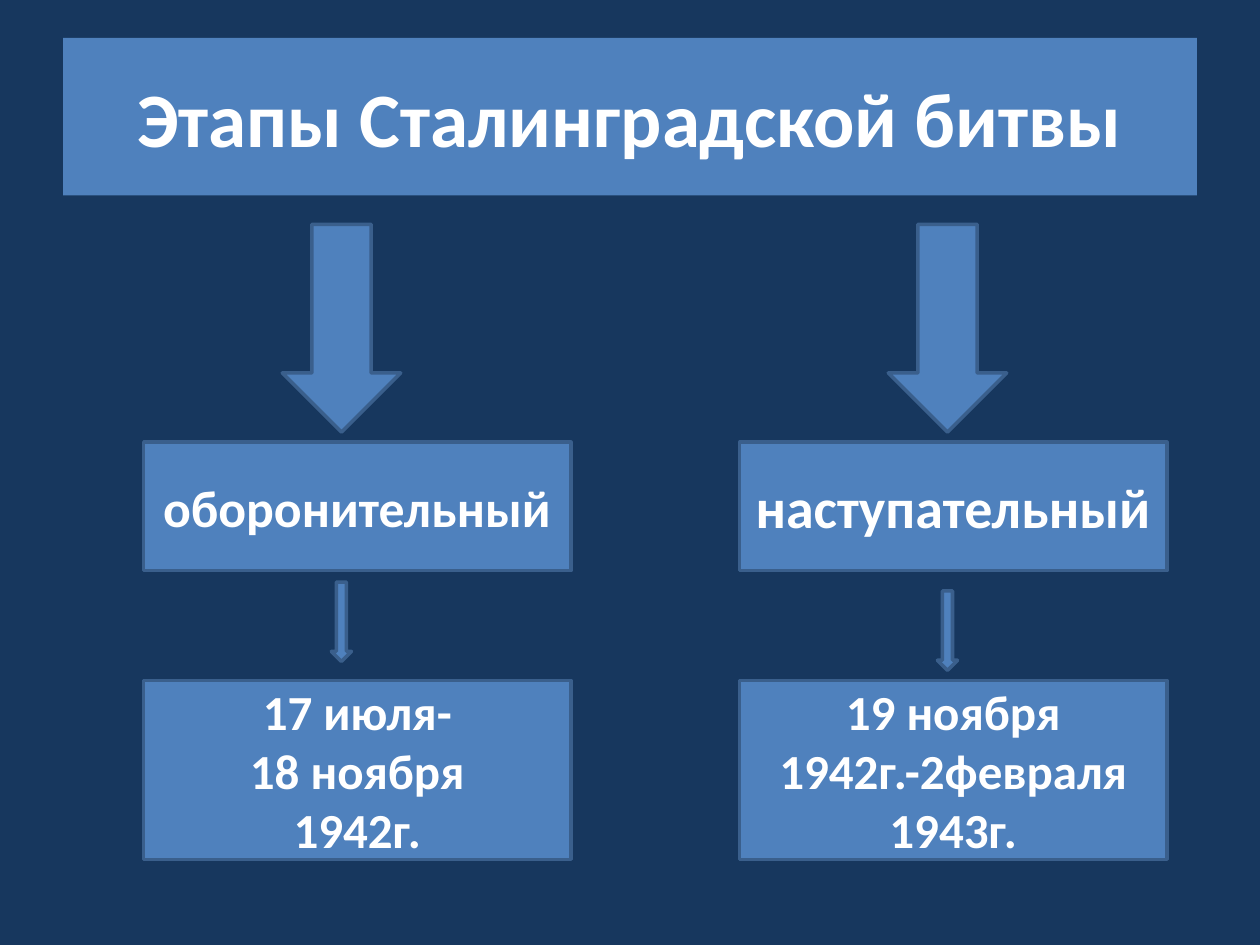
from pptx import Presentation
from pptx.dml.color import RGBColor
from pptx.enum.shapes import MSO_SHAPE as Shape
from pptx.enum.text import MSO_ANCHOR as Anchor, PP_ALIGN as Align
from pptx.util import Inches, Pt

COLORS = {"background": "17375E", "panel": "4F81BD", "edge": "3A5F8C", "text": "FFFFFF"}
BOX_LEFT, BOX_WIDTH, COLUMN_STEP = 1.14, 3.39, 4.73
ARROW_CENTER, ARROW_STEP = 2.71, 4.81
NAME_TOP, NAME_HEIGHT = 3.51, 1.02
DATES_TOP, DATES_HEIGHT = 5.4, 1.42

STAGES = [
    {"name": "оборонительный", "name_size": 29.6, "link_top": 4.62,
     "dates": ["17 июля-", "18 ноября", "1942г."]},
    {"name": "наступательный", "name_size": 32, "link_top": 4.69,
     "dates": ["19 ноября 1942г.-2февраля 1943г."]},
]


def write(panel, lines, size):
    frame = panel.text_frame
    frame.word_wrap = True
    frame.vertical_anchor = Anchor.MIDDLE
    frame.text = "\n".join(lines)
    for paragraph in frame.paragraphs:
        paragraph.alignment = Align.CENTER
        font = paragraph.font
        font.name, font.size, font.bold = "Calibri", Pt(size), True
        font.color.rgb = RGBColor.from_string(COLORS["text"])


def add_panel(kind, left, top, width, height):
    panel = slide.shapes.add_shape(kind, *map(Inches, (left, top, width, height)))
    panel.shadow.inherit = False
    panel.fill.solid()
    panel.fill.fore_color.rgb = RGBColor.from_string(COLORS["panel"])
    panel.line.color.rgb = RGBColor.from_string(COLORS["edge"])
    panel.line.width = Pt(2)
    return panel


deck = Presentation()
deck.slide_width, deck.slide_height = Inches(10), Inches(7.5)
slide = deck.slides.add_slide(deck.slide_layouts[5])
slide.background.fill.solid()
slide.background.fill.fore_color.rgb = RGBColor.from_string(COLORS["background"])

heading = slide.shapes.title
heading.left, heading.top = Inches(0.5), Inches(0.3)
heading.width, heading.height = Inches(9), Inches(1.25)
heading.fill.solid()
heading.fill.fore_color.rgb = RGBColor.from_string(COLORS["panel"])
write(heading, ["Этапы Сталинградской битвы"], 44)

for column, stage in enumerate(STAGES):
    box_left = BOX_LEFT + column * COLUMN_STEP
    center = ARROW_CENTER + column * ARROW_STEP
    for top, width, height in [(1.78, 0.94, 1.65), (stage["link_top"], 0.16, 0.63)]:
        add_panel(Shape.DOWN_ARROW, center - width / 2, top, width, height)
    stage_name = add_panel(Shape.RECTANGLE, box_left, NAME_TOP, BOX_WIDTH, NAME_HEIGHT)
    write(stage_name, [stage["name"]], stage["name_size"])
    stage_dates = add_panel(Shape.RECTANGLE, box_left, DATES_TOP, BOX_WIDTH, DATES_HEIGHT)
    write(stage_dates, stage["dates"], 28)

deck.save("out.pptx")
